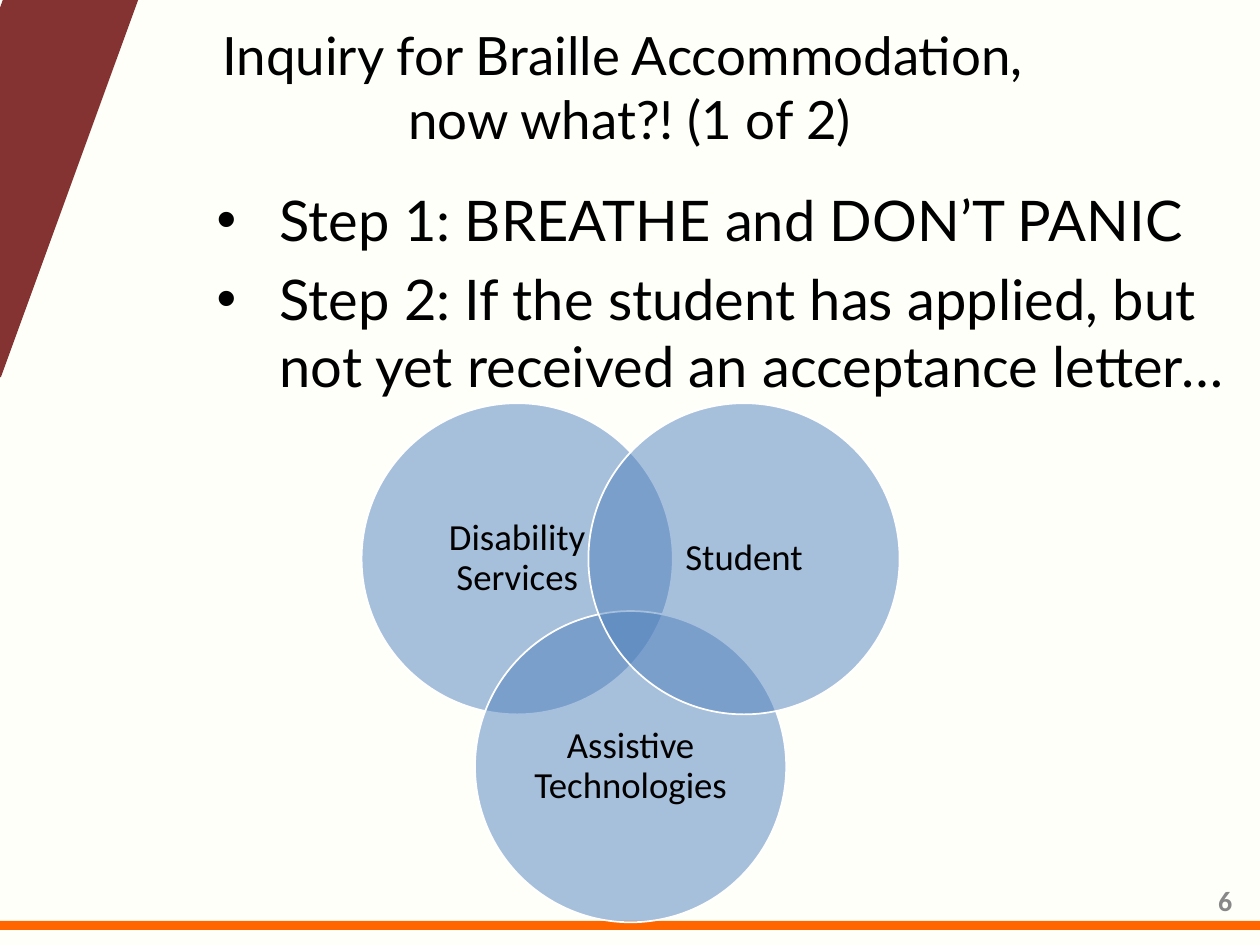
import pptx
import pptx.util
import pptx.dml.color
import pptx.enum.shapes
import pptx.enum.text
import pptx.oxml
import pptx.oxml.ns

COLORS = {"paper": "FFFFFA", "maroon": "660000", "orange": "FF6600",
          "blue": "4F81BD", "white": "FFFFFF", "black": "000000", "gray": "888888"}
ALIGN = pptx.enum.text.PP_ALIGN
ANCHOR = pptx.enum.text.MSO_ANCHOR
SHAPE = pptx.enum.shapes.MSO_SHAPE


class Deck:
    """Style and current slide, measured on a grid of 100 columns by 75 rows."""

    def __init__(self):
        self.prs = pptx.Presentation()
        self.prs.slide_width = pptx.util.Inches(10)
        self.prs.slide_height = pptx.util.Inches(7.5)
        self.slide = self.prs.slides.add_slide(self.prs.slide_layouts[1])
        self.paint(self.slide.background.fill, "paper")

    def box(self, col, row, cols, rows):
        return [pptx.util.Inches(n / 10) for n in (col, row, cols, rows)]

    def paint(self, fill, color, alpha=None):
        fill.solid()
        fill.fore_color.rgb = pptx.dml.color.RGBColor.from_string(COLORS[color])
        if alpha:
            clr = fill._xPr.find(".//" + pptx.oxml.ns.qn("a:srgbClr"))
            a = pptx.oxml.parse_xml(f'<a:alpha {pptx.oxml.ns.nsdecls("a")} val="{alpha * 1000}"/>')
            clr.append(a)

    def frame(self, sp, anchor, inset=0.05):
        tf = sp.text_frame
        tf.word_wrap = True
        tf.auto_size = pptx.enum.text.MSO_AUTO_SIZE.NONE
        tf.vertical_anchor = anchor
        tf.margin_left = tf.margin_right = pptx.util.Inches(inset)
        tf.margin_top = tf.margin_bottom = pptx.util.Inches(inset)
        return tf

    def run(self, p, text, size, font, color="black", bold=False):
        r = p.add_run()
        r.text = text
        r.font.size = pptx.util.Pt(size)
        r.font.name = font
        r.font.bold = bold
        r.font.color.rgb = pptx.dml.color.RGBColor.from_string(COLORS[color])

    def shape(self, kind, at, color, alpha=None, line=None, rotation=0):
        sp = self.slide.shapes.add_shape(kind, *self.box(*at))
        sp.shadow.inherit = False
        sp.rotation = rotation
        self.paint(sp.fill, color, alpha)
        if line:
            self.paint(sp.line.fill, line)
            sp.line.width = pptx.util.Pt(1)
        else:
            sp.line.fill.background()

    def label(self, at, text, size, align, inset=0.05, spacing=1.0, **style):
        sp = self.slide.shapes.add_textbox(*self.box(*at))
        p = self.frame(sp, ANCHOR.MIDDLE, inset).paragraphs[0]
        p.alignment = align
        p.line_spacing = spacing
        self.run(p, text, size, "Calibri", **style)

    def place(self, sp, at):
        sp.left, sp.top, sp.width, sp.height = self.box(*at)
        tree = self.slide.shapes._spTree
        tree.remove(sp._element)
        tree.append(sp._element)

    def title(self, at, lines):
        sp = self.slide.shapes.title
        self.place(sp, at)
        p = self.frame(sp, ANCHOR.MIDDLE).paragraphs[0]
        p.alignment = ALIGN.CENTER
        for i, line in enumerate(lines):
            if i:
                p.add_line_break()
            self.run(p, line, 30.2, "Lato")

    def bullets(self, at, items):
        sp = self.slide.placeholders[1]
        self.place(sp, at)
        tf = self.frame(sp, ANCHOR.TOP)
        for i, item in enumerate(items):
            p = tf.add_paragraph() if i else tf.paragraphs[0]
            pPr = p._p.get_or_add_pPr()
            pPr.set("marL", str(pptx.util.Inches(0.5)))
            pPr.set("indent", str(pptx.util.Inches(-0.5)))
            pPr.append(pptx.oxml.parse_xml(f'<a:buChar {pptx.oxml.ns.nsdecls("a")} char="•"/>'))
            p.space_before = pptx.util.Pt(7 if i else 0)
            self.run(p, item, 32, "Lato")

    def venn(self, col, row, size, step, drop, names):
        pad = size * 0.147
        for i, name in enumerate(names):
            x, y = col + i * step, row + i % 2 * drop
            self.shape(SHAPE.OVAL, (x, y, size, size), "blue", 50, "white")
            self.label((x + pad, y + pad, size - 2 * pad, size - 2 * pad), name, 21,
                       ALIGN.CENTER, inset=0.09, spacing=0.9)


def main():
    deck = Deck()
    deck.shape(SHAPE.RECTANGLE, (-4.2, -3.1, 10.1, 32.3), "maroon", 80, rotation=20)
    deck.shape(SHAPE.RECTANGLE, (-0.1, 73.1, 100.1, 0.7), "orange")
    deck.title((5, 1.2, 90, 11.3),
               ["Inquiry for Braille Accommodation, ", "now what?! (1 of 2)"])
    deck.bullets((16.7, 14.2, 82.5, 59),
                 ["Step 1: BREATHE and DON’T PANIC",
                  "Step 2: If the student has applied, but not yet received an acceptance letter…"])
    deck.venn(28.7, 32, 24.7, 9, 16.5,
              ["Disability Services", "Assistive Technologies", "Student"])
    deck.label((75, 70, 23.3, 2.9), "6", 16, ALIGN.RIGHT, color="gray", bold=True)
    deck.prs.save("out.pptx")


if __name__ == "__main__":
    main()
